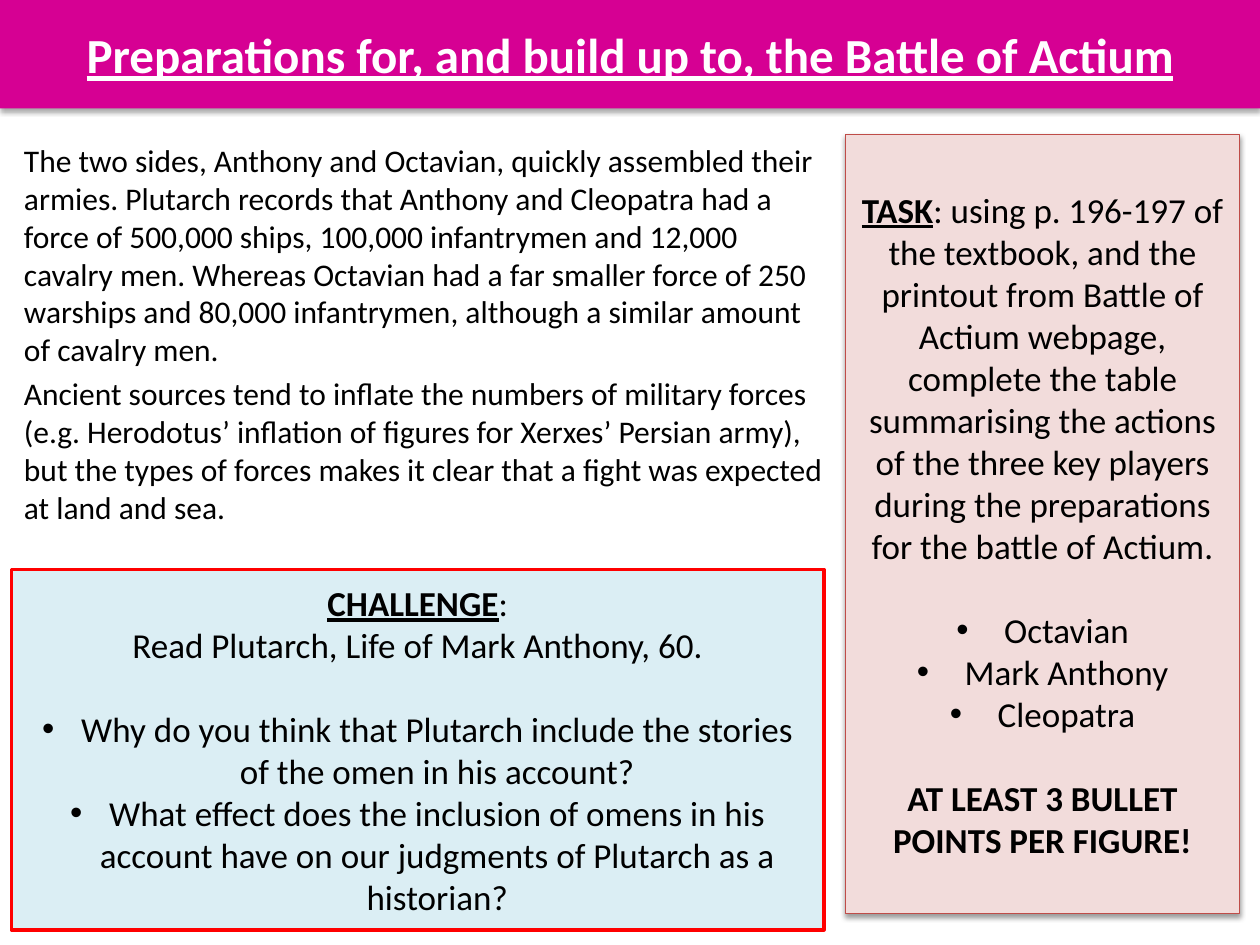
"""Build a slide on the preparations for the Battle of Actium."""
from lxml.etree import SubElement
from pptx import Presentation
from pptx.dml.color import RGBColor
from pptx.enum.shapes import MSO_SHAPE
from pptx.enum.text import MSO_ANCHOR, MSO_AUTO_SIZE, PP_ALIGN
from pptx.oxml.ns import qn
from pptx.util import Inches, Pt


def style(s, fill=None, line=None, width=0, shadow=0):
    """Set the fill, outline and soft shadow of a shape."""
    if fill:
        s.fill.solid()
        s.fill.fore_color.rgb = RGBColor.from_string(fill)
    if line:
        s.line.color.rgb = RGBColor.from_string(line)
        s.line.width = Pt(width)
    s.shadow.inherit = False
    if shadow:
        effects = s._element.spPr.find(qn("a:effectLst"))
        outer = SubElement(effects, qn("a:outerShdw"), blurRad=str(Pt(3.1)),
                           dist=str(Pt(1.7)), dir="5400000", rotWithShape="0")
        black = SubElement(outer, qn("a:srgbClr"), val="000000")
        SubElement(black, qn("a:alpha"), val=str(shadow * 1000))


def write(s, paragraphs, size, align, anchor, color="000000", indent=0):
    """Fill a shape with (runs, space before, bulleted) paragraphs."""
    tf = s.text_frame
    tf.word_wrap, tf.auto_size, tf.vertical_anchor = True, MSO_AUTO_SIZE.NONE, anchor
    for i, (runs, before, bulleted) in enumerate(paragraphs):
        p = tf.paragraphs[0] if i == 0 else tf.add_paragraph()
        pPr = p._p.get_or_add_pPr()
        hang = Inches(indent) if bulleted else 0
        pPr.set("marL", str(hang))
        pPr.set("indent", str(-hang))
        if bulleted:
            SubElement(pPr, qn("a:buFont"), typeface="Arial")
            SubElement(pPr, qn("a:buChar"), char="•")
        else:
            SubElement(pPr, qn("a:buNone"))
        p.alignment, p.space_before = align, Pt(before)
        for text, extra in runs:
            r = p.add_run()
            r.text = text
            look = {"name": "Calibri", "size": Pt(size), "bold": False, "underline": False}
            for key, value in {**look, **extra}.items():
                setattr(r.font, key, value)
            r.font.color.rgb = RGBColor.from_string(color)


HEAD = {"bold": True, "underline": True}
GAP = 24

prs = Presentation()
prs.slide_width, prs.slide_height = Inches(10), Inches(7.5)
slide = prs.slides.add_slide(prs.slide_layouts[1])
title, body = slide.placeholders
task, challenge = [slide.shapes.add_shape(MSO_SHAPE.RECTANGLE, 0, 0, 0, 0) for _ in range(2)]

for s, box in ((title, (0, 0, 10, 0.86)), (body, (0.09, 1.07, 6.54, 4)),
               (task, (6.71, 1.07, 3.13, 6.18)), (challenge, (0.09, 4.52, 6.45, 2.86))):
    s.left, s.top, s.width, s.height = map(Inches, box)

style(title, "D60093", shadow=35)
style(task, "F2DCDB", "BF4C48", 0.75, shadow=38)
style(challenge, "DBEEF4", "FF0000", 2)

write(title, [([("Preparations for, and build up to, the Battle of Actium", HEAD)], 0, False)],
      28, PP_ALIGN.CENTER, MSO_ANCHOR.MIDDLE, "FFFFFF")

write(body, [
    ([("The two sides, Anthony and Octavian, quickly assembled their armies. Plutarch records "
       "that Anthony and Cleopatra had a force of 500,000 ships, 100,000 infantrymen and 12,000 "
       "cavalry men. Whereas Octavian had a far smaller force of 250 warships and 80,000 "
       "infantrymen, although a similar amount of cavalry men.", {})], 0, False),
    ([("Ancient sources tend to inflate the numbers of military forces (e.g. Herodotus’ "
       "inflation of figures for Xerxes’ Persian army), but the types of forces makes it clear "
       "that a fight was expected at land and sea.", {})], 3.6, False),
], 18, PP_ALIGN.LEFT, MSO_ANCHOR.TOP)

write(task, [
    ([("TASK", HEAD),
      (": using p. 196-197 of the textbook, and the printout from Battle of Actium webpage, "
       "complete the table summarising the actions of the three key players during the "
       "preparations for the battle of Actium.", {})], 0, False),
    ([("Octavian", {})], GAP, True),
    ([("Mark Anthony", {})], 0, True),
    ([("Cleopatra", {})], 0, True),
    ([("AT LEAST 3 BULLET POINTS PER FIGURE!", {"bold": True})], GAP, False),
], 20, PP_ALIGN.CENTER, MSO_ANCHOR.MIDDLE, indent=0.38)

write(challenge, [
    ([("CHALLENGE", HEAD), (":", {})], 0, False),
    ([("Read Plutarch, Life of Mark Anthony, 60.", {})], 0, False),
    ([("Why do you think that Plutarch include the stories of the omen in his account?", {})],
     GAP, True),
    ([("What effect does the inclusion of omens in his account have on our judgments of "
       "Plutarch as a historian?", {})], 0, True),
], 20, PP_ALIGN.CENTER, MSO_ANCHOR.MIDDLE, indent=0.31)

prs.save("out.pptx")
